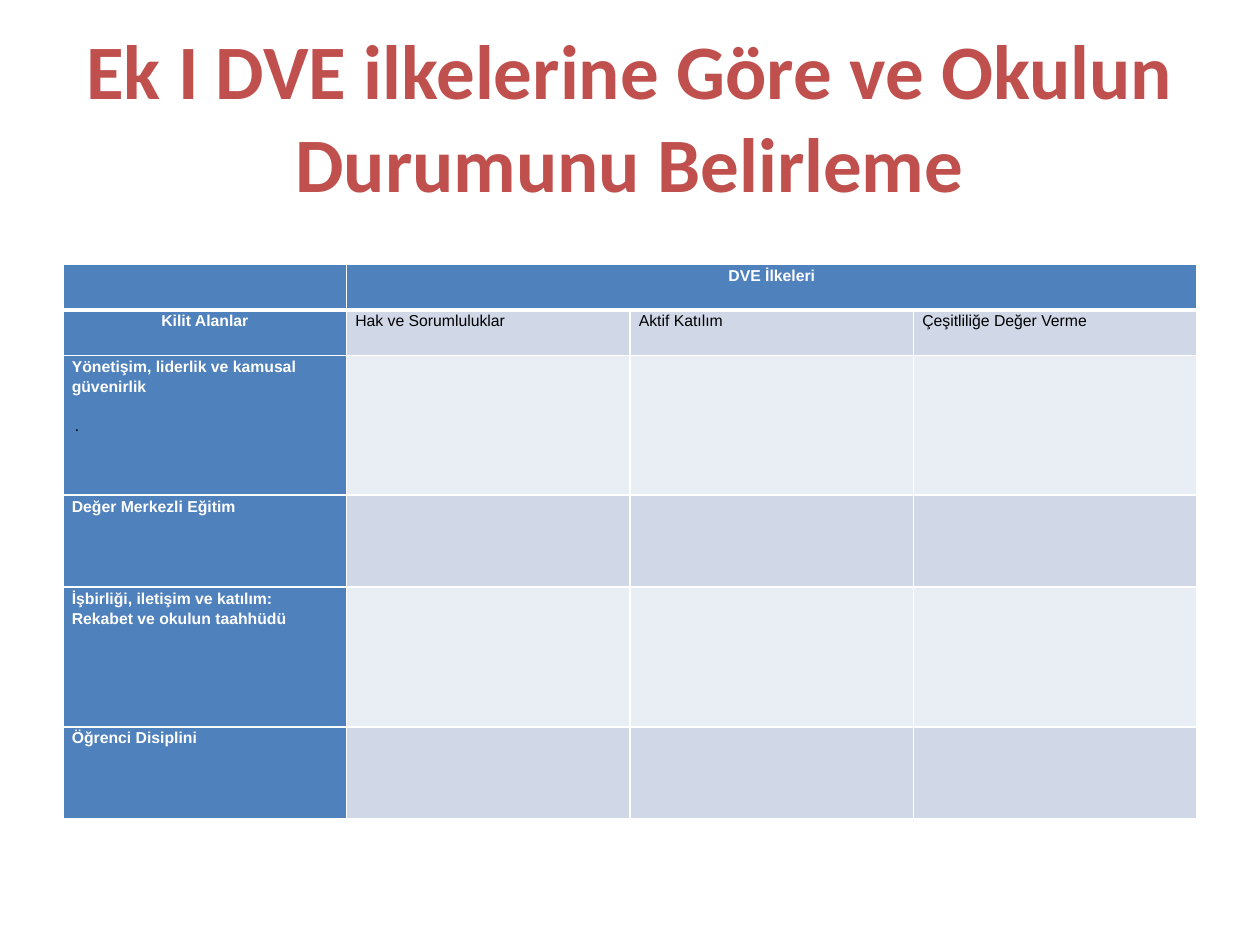
from typing import NamedTuple

from lxml.etree import SubElement
from pptx import Presentation
from pptx.dml.color import RGBColor
from pptx.enum.text import MSO_ANCHOR, MSO_AUTO_SIZE, PP_ALIGN
from pptx.oxml.ns import qn
from pptx.util import Inches, Pt

WHITE = RGBColor(0xFF, 0xFF, 0xFF)
BLACK = RGBColor(0, 0, 0)
RED = RGBColor(0xC0, 0x50, 0x4D)
BLUE = RGBColor(0x4F, 0x81, 0xBD)
DARK = RGBColor(0xD0, 0xD8, 0xE8)
LIGHT = RGBColor(0xE9, 0xED, 0xF4)

WIDTH, HEIGHT = Inches(10), Inches(7.5)
LEFT, SPAN = int(WIDTH * 0.05), int(WIDTH * 0.9)
COLS = 4


class Row(NamedTuple):
    height: float
    texts: tuple[str, ...]
    fill: RGBColor
    align: PP_ALIGN = PP_ALIGN.LEFT


ROWS = [
    Row(0.36, ("", "DVE İlkeleri"), BLUE, PP_ALIGN.CENTER),
    Row(0.36, ("Kilit Alanlar", "Hak ve Sorumluluklar", "Aktif Katılım",
               "Çeşitliliğe Değer Verme"), DARK, PP_ALIGN.CENTER),
    Row(1.11, ("Yönetişim, liderlik ve kamusal güvenirlik",), LIGHT),
    Row(0.73, ("Değer Merkezli Eğitim",), DARK),
    Row(1.11, ("İşbirliği, iletişim ve katılım: Rekabet ve okulun taahhüdü",), LIGHT),
    Row(0.73, ("Öğrenci Disiplini",), DARK),
]


def style(par, face: str, size: float, color: RGBColor,
          bold: bool = False, italic: bool = False) -> None:
    for run in par.runs:
        font = run.font
        font.name, font.size = face, Pt(size)
        font.bold, font.italic = bold, italic
        font.color.rgb = color


def edge(cell, widths: dict[str, float]) -> None:
    props = cell._tc.get_or_add_tcPr()
    for spot, (side, width) in enumerate(widths.items()):
        line = SubElement(props, qn(f"a:{side}"), w=str(Pt(width)))
        fill = SubElement(line, qn("a:solidFill"))
        SubElement(fill, qn("a:srgbClr"), val=str(WHITE))
        props.insert(spot, line)


def paint(cell, text: str, fill: RGBColor, align: PP_ALIGN,
          head: bool, top: float, base: float) -> None:
    cell.margin_left = cell.margin_right = Inches(0.07)
    cell.margin_top = cell.margin_bottom = 0
    cell.fill.solid()
    cell.fill.fore_color.rgb = fill
    edge(cell, {"lnL": 1, "lnR": 1, "lnT": top, "lnB": base})
    if text:
        cell.text_frame.text = text
        par = cell.text_frame.paragraphs[0]
        par.alignment, par.line_spacing = align, 1.15
        style(par, "Arial", 9, WHITE if head else BLACK, bold=head)


def add_grid(slide) -> None:
    total = Inches(sum(row.height for row in ROWS))
    table = slide.shapes.add_table(
        len(ROWS), COLS, LEFT, int(HEIGHT * 0.28), SPAN, total).table
    table.first_col = True
    for r, row in enumerate(ROWS):
        table.rows[r].height = Inches(row.height)
        for c in range(COLS):
            text = row.texts[c] if c < len(row.texts) else ""
            head = r == 0 or c == 0
            align = row.align if head else PP_ALIGN.LEFT
            paint(table.cell(r, c), text, BLUE if head else row.fill, align,
                  head, 3 if r == 1 else 1, 3 if r == 0 else 1)
    table.cell(0, 1).merge(table.cell(0, COLS - 1))


def add_title(slide) -> None:
    title = slide.shapes.title
    title.left, title.top = LEFT, Inches(0.29)
    title.width, title.height = SPAN, Inches(1.25)
    frame = title.text_frame
    frame.text = "Ek I DVE ilkelerine Göre ve Okulun Durumunu Belirleme"
    frame.auto_size = MSO_AUTO_SIZE.NONE
    frame.vertical_anchor = MSO_ANCHOR.MIDDLE
    par = frame.paragraphs[0]
    par.alignment = PP_ALIGN.CENTER
    style(par, "Calibri", 44, RED, bold=True)


def add_dot(slide) -> None:
    box = slide.shapes.add_textbox(LEFT, Inches(3.25), Inches(0.23), Inches(0.56))
    frame = box.text_frame
    frame.text = "."
    frame.word_wrap = False
    style(frame.paragraphs[0], "Calibri", 9, BLACK, italic=True)


def main() -> None:
    deck = Presentation()
    deck.slide_width, deck.slide_height = WIDTH, HEIGHT
    slide = deck.slides.add_slide(deck.slide_layouts[5])
    add_title(slide)
    add_grid(slide)
    add_dot(slide)
    deck.save("out.pptx")


if __name__ == "__main__":
    main()
